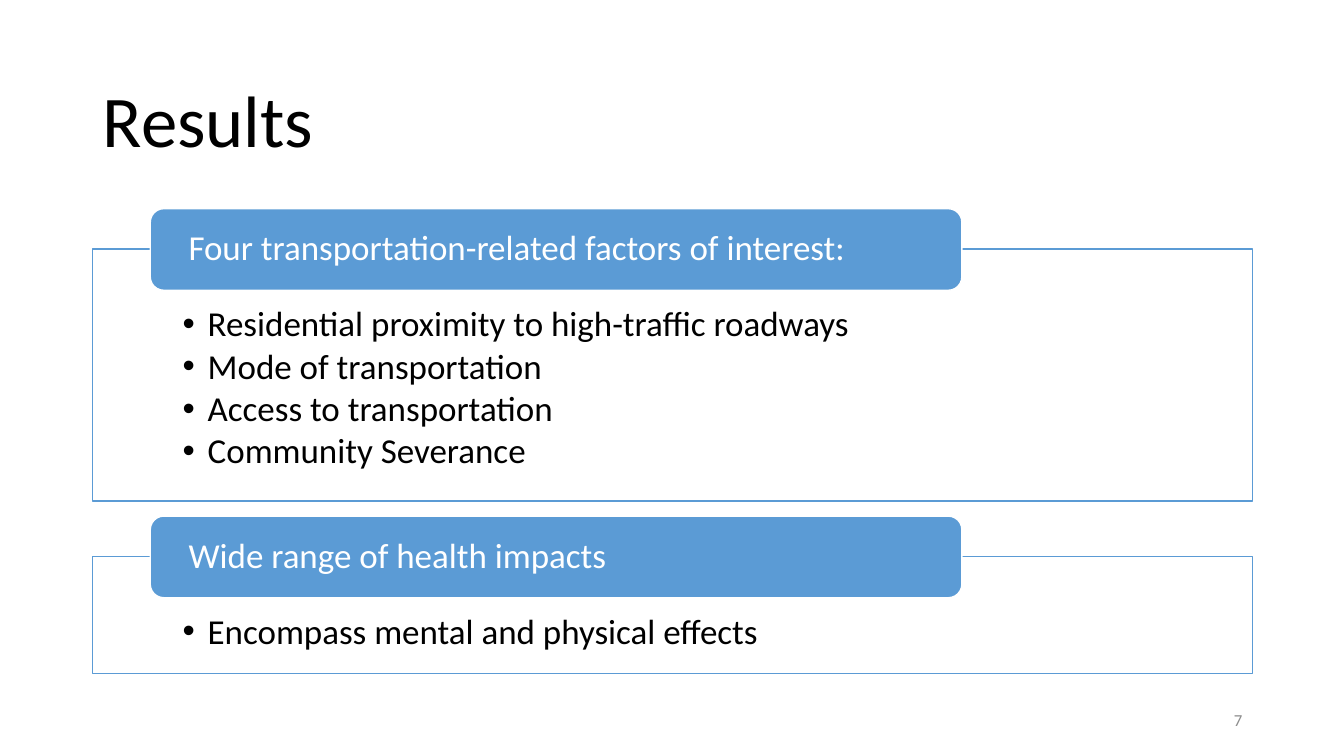
import dataclasses

import pptx
import pptx.dml.color
import pptx.enum.shapes
import pptx.enum.text
import pptx.oxml
import pptx.oxml.ns
import pptx.util

Inches = pptx.util.Inches
Pt = pptx.util.Pt
ALIGN = pptx.enum.text.PP_ALIGN
ANCHOR = pptx.enum.text.MSO_ANCHOR


@dataclasses.dataclass(frozen=True)
class Theme:
    font: str = "Calibri"
    blue: str = "5B9BD5"
    white: str = "FFFFFF"
    black: str = "000000"
    gray: str = "8C8C8C"
    title: float = 52
    body: float = 25
    small: float = 12


THEME = Theme()
LEFT, WIDTH = 0.92, 11.5
TAB_RISE = 0.4

PANELS = [
    (2.47, 2.5, "Four transportation-related factors of interest:", [
        "Residential proximity to high-traffic roadways",
        "Mode of transportation",
        "Access to transportation",
        "Community Severance",
    ]),
    (5.52, 1.16, "Wide range of health impacts", [
        "Encompass mental and physical effects",
    ]),
]


def color(code):
    return pptx.dml.color.RGBColor.from_string(code)


def place(shape, left, top, width, height):
    shape.left, shape.top = Inches(left), Inches(top)
    shape.width, shape.height = Inches(width), Inches(height)


def paint(shape, fill, line):
    shape.fill.solid()
    shape.fill.fore_color.rgb = color(fill)
    shape.line.color.rgb = color(line)
    shape.line.width = Pt(1)


def setup(shape, anchor, insets):
    """Fix wrapping, anchor and insets (left, top, right, bottom)."""
    frame = shape.text_frame
    frame.word_wrap = True
    frame.auto_size = pptx.enum.text.MSO_AUTO_SIZE.NONE
    frame.vertical_anchor = anchor
    (frame.margin_left, frame.margin_top,
     frame.margin_right, frame.margin_bottom) = map(Inches, insets)
    return frame


def write(para, text, size, ink, align=ALIGN.LEFT, after=0):
    para.alignment = align
    para.line_spacing = 0.9
    para.space_before = Pt(0)
    para.space_after = Pt(after)
    run = para.add_run()
    run.text = text
    run.font.name = THEME.font
    run.font.size = Pt(size)
    run.font.color.rgb = color(ink)


def bullet(para):
    props = para._p.get_or_add_pPr()
    props.set("marL", str(Inches(0.25)))
    props.set("indent", str(-Inches(0.25)))
    mark = pptx.oxml.parse_xml(
        f'<a:buChar {pptx.oxml.ns.nsdecls("a")} char="•"/>')
    props.append(mark)


def add_title(slide, text):
    title = slide.shapes.title
    place(title, LEFT, 0.61, WIDTH, 1.24)
    frame = setup(title, ANCHOR.MIDDLE, (0.1, 0.05, 0.1, 0.05))
    write(frame.paragraphs[0], text, THEME.title, THEME.black)


def add_list(body, top, height, items):
    place(body, LEFT, top, WIDTH, height)
    paint(body, THEME.white, THEME.blue)
    frame = setup(body, ANCHOR.TOP, (0.89, 0.57, 0.89, 0.19))
    for num, item in enumerate(items):
        para = frame.add_paragraph() if num else frame.paragraphs[0]
        write(para, item, THEME.body, THEME.black, after=3.3)
        bullet(para)


def add_tab(slide, top, text):
    tab = slide.shapes.add_shape(
        pptx.enum.shapes.MSO_SHAPE.ROUNDED_RECTANGLE,
        Inches(1.49), Inches(top), Inches(8.05), Inches(0.81))
    tab.shadow.inherit = False
    paint(tab, THEME.blue, THEME.white)
    frame = setup(tab, ANCHOR.MIDDLE, (0.34, 0, 0.34, 0))
    write(frame.paragraphs[0], text, THEME.body, THEME.white)


def add_page(slide, text):
    box = slide.shapes.add_textbox(
        Inches(9.42), Inches(6.95), Inches(3), Inches(0.4))
    frame = setup(box, ANCHOR.MIDDLE, (0.1, 0.05, 0.1, 0.05))
    write(frame.paragraphs[0], text, THEME.small, THEME.gray, ALIGN.RIGHT)


def main():
    deck = pptx.Presentation()
    deck.slide_width, deck.slide_height = Inches(13.33), Inches(7.5)
    # The "Two Content" layout has one body for each panel.
    slide = deck.slides.add_slide(deck.slide_layouts[3])
    add_title(slide, "Results")
    for spot, (top, height, head, items) in enumerate(PANELS, 1):
        add_list(slide.placeholders[spot], top, height, items)
        add_tab(slide, top - TAB_RISE, head)
    add_page(slide, "7")
    deck.save("out.pptx")


if __name__ == "__main__":
    main()
